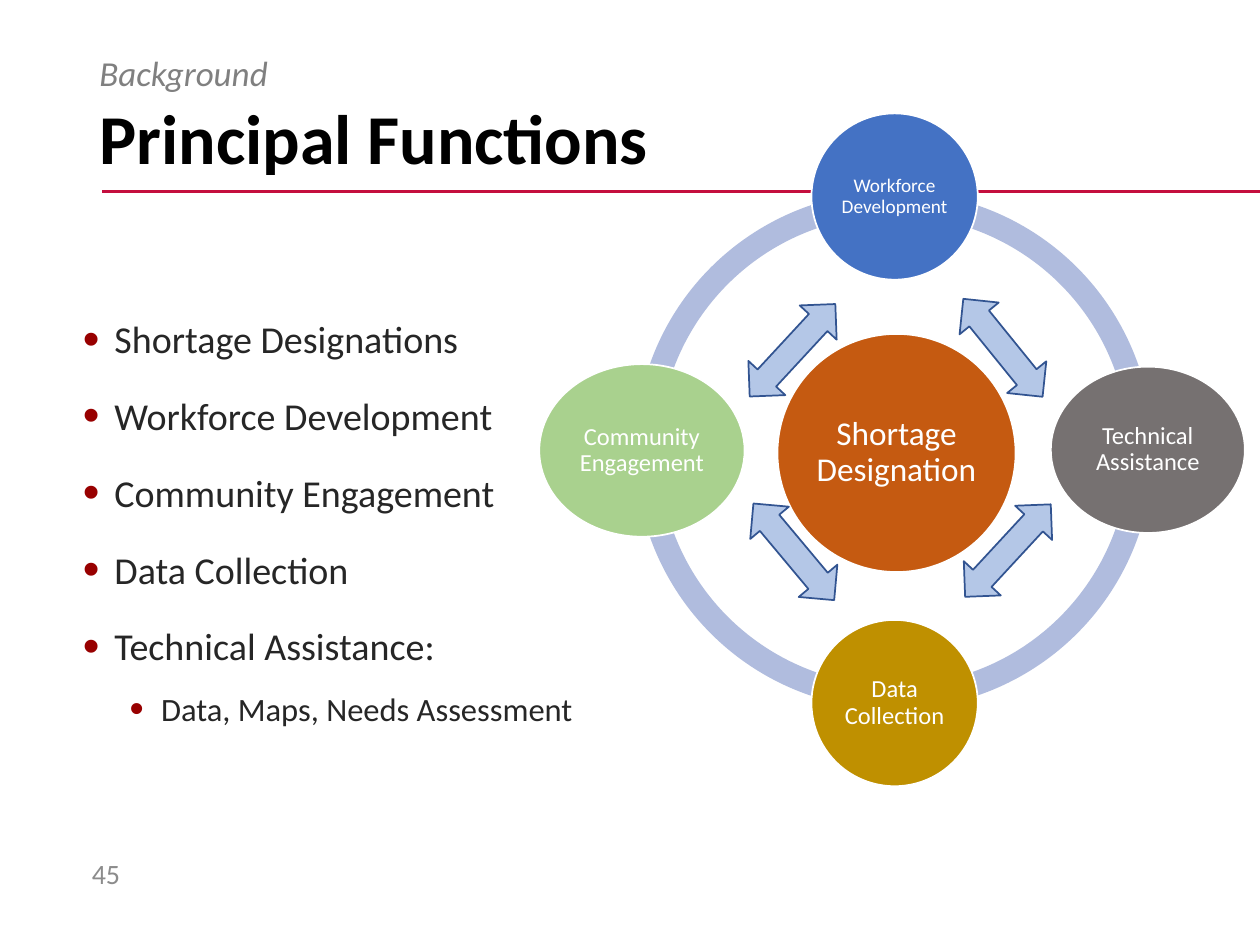
from lxml.etree import SubElement
from pptx import Presentation
from pptx.dml.color import RGBColor
from pptx.enum.shapes import MSO_CONNECTOR, MSO_SHAPE
from pptx.enum.text import MSO_ANCHOR, MSO_AUTO_SIZE, PP_ALIGN
from pptx.oxml.ns import qn
from pptx.util import Inches, Pt

BLACK = RGBColor(0x00, 0x00, 0x00)
WHITE = RGBColor(0xFF, 0xFF, 0xFF)
GRAY = RGBColor(0x80, 0x80, 0x80)
NUMBER_GRAY = RGBColor(0x8C, 0x8C, 0x8C)
DARK = RGBColor(0x26, 0x26, 0x26)
CRIMSON = RGBColor(0xC4, 0x0E, 0x3E)
RING_BLUE = RGBColor(0xB0, 0xBC, 0xDE)
ORANGE = RGBColor(0xC5, 0x5A, 0x11)
BLUE = RGBColor(0x44, 0x72, 0xC4)
TAUPE = RGBColor(0x76, 0x71, 0x71)
GOLD = RGBColor(0xBF, 0x90, 0x00)
GREEN = RGBColor(0xA9, 0xD1, 0x8E)
ARROW_FILL = RGBColor(0xB4, 0xC7, 0xE7)
ARROW_LINE = RGBColor(0x32, 0x54, 0x91)
BULLET_RED = "980000"

presentation = Presentation()
presentation.slide_width = Inches(10)
presentation.slide_height = Inches(7.5)
slide = presentation.slides.add_slide(presentation.slide_layouts[5])

# Grid of 100 columns by 75 rows
COLUMN = presentation.slide_width / 100
ROW = presentation.slide_height / 75


def box(left, top, width, height):
    """Turn grid columns and rows into a position and a size."""
    return (round(left * COLUMN), round(top * ROW),
            round(width * COLUMN), round(height * ROW))


def write_text(frame, text, size, color, bold=False, italic=False,
               align=PP_ALIGN.LEFT, anchor=MSO_ANCHOR.TOP, spacing=0.9,
               before=0, bullet_indent=None, level=0):
    """Fill the frame's empty first paragraph, or append a new one."""
    frame.word_wrap = True
    frame.auto_size = MSO_AUTO_SIZE.NONE
    frame.vertical_anchor = anchor
    paragraph = frame.add_paragraph() if frame.text else frame.paragraphs[0]
    paragraph.alignment = align
    paragraph.level = level
    paragraph.line_spacing = spacing
    paragraph.space_before = Pt(before)
    if bullet_indent is not None:
        properties = paragraph._p.get_or_add_pPr()
        properties.set("marL", str(Inches(bullet_indent)))
        properties.set("indent", str(Inches(-0.25)))
        bullet_color = SubElement(properties, qn("a:buClr"))
        SubElement(bullet_color, qn("a:srgbClr"), val=BULLET_RED)
        SubElement(properties, qn("a:buSzPct"), val="125000")
        SubElement(properties, qn("a:buFont"), typeface="Arial")
        SubElement(properties, qn("a:buChar"), char="•")
    run = paragraph.add_run()
    run.text = text
    run.font.name = "Calibri"
    run.font.size = Pt(size)
    run.font.color.rgb = color
    run.font.bold = bold
    run.font.italic = italic


# Title, kicker and rule
title = slide.shapes.title
title.left, title.top, title.width, title.height = box(6.9, 4, 86.2, 14.5)
write_text(title.text_frame, "Principal Functions", 40, BLACK, bold=True,
           anchor=MSO_ANCHOR.MIDDLE)

rule_left, rule_top, rule_width, _ = box(8.1, 15.2, 91.9, 0)
rule = slide.shapes.add_connector(MSO_CONNECTOR.STRAIGHT, rule_left, rule_top,
                                  rule_left + rule_width, rule_top)
rule.line.color.rgb = CRIMSON
rule.line.width = Pt(2.25)
SubElement(rule._element.spPr, qn("a:effectLst"))

kicker = slide.shapes.add_textbox(*box(6.9, 4, 86.2, 4.9))
write_text(kicker.text_frame, "Background", 20, GRAY, italic=True)

# Ring of four quarter arcs; angles are in units of 100000/60000 degree
QUARTER = 54
for quarter in range(4):
    arc = slide.shapes.add_shape(MSO_SHAPE.BLOCK_ARC,
                                 *box(50.4, 15.2, 41.1, 41.1))
    arc.adjustments[0] = quarter * QUARTER
    arc.adjustments[1] = (quarter + 1) % 4 * QUARTER
    arc.adjustments[2] = 0.046
    arc.shadow.inherit = False
    arc.fill.solid()
    arc.fill.fore_color.rgb = RING_BLUE
    arc.line.fill.background()

# Function circles: text, size, fill, left, top, width, height
circles = [
    ("Shortage Designation", 19, ORANGE, 61.7, 26.5, 18.9, 18.9),
    ("Workforce Development", 11, BLUE, 64.4, 9, 13.2, 13.2),
    ("Technical Assistance", 14, TAUPE, 83.4, 29.1, 15.4, 13.2),
    ("Data Collection", 14, GOLD, 64.4, 49.2, 13.2, 13.2),
    ("Community Engagement", 14, GREEN, 42.8, 28.9, 16.3, 13.7),
]
for text, size, fill, *place in circles:
    circle = slide.shapes.add_shape(MSO_SHAPE.OVAL, *box(*place))
    circle.shadow.inherit = False
    circle.fill.solid()
    circle.fill.fore_color.rgb = fill
    circle.line.color.rgb = WHITE
    circle.line.width = Pt(1)
    frame = circle.text_frame
    frame.margin_left = frame.margin_right = Inches(0.02)
    frame.margin_top = frame.margin_bottom = Inches(0.02)
    write_text(frame, text, size, WHITE, align=PP_ALIGN.CENTER,
               anchor=MSO_ANCHOR.MIDDLE)

# Double arrows around the centre: left, top, rotation
arrows = [(57.9, 25.8, 312.8), (75, 41.7, 312.8),
          (58, 41.8, 50.1), (74.6, 25.6, 231)]
for left, top, rotation in arrows:
    arrow = slide.shapes.add_shape(MSO_SHAPE.LEFT_RIGHT_ARROW,
                                   *box(left, top, 10, 4))
    arrow.rotation = rotation
    arrow.shadow.inherit = False
    arrow.fill.solid()
    arrow.fill.fore_color.rgb = ARROW_FILL
    arrow.line.color.rgb = ARROW_LINE
    arrow.line.width = Pt(1)

# Bullet list
bullets = slide.shapes.add_textbox(*box(5.3, 23.5, 82.6, 35.7)).text_frame
functions = ["Shortage Designations", "Workforce Development",
             "Community Engagement", "Data Collection",
             "Technical Assistance:"]
for index, text in enumerate(functions):
    write_text(bullets, text, 21.7, DARK, spacing=1.3,
               before=10 if index else 0, bullet_indent=0.28)
write_text(bullets, "Data, Maps, Needs Assessment", 18.6, DARK, spacing=1.3,
           before=5, bullet_indent=0.65, level=1)

# Slide number
number = slide.shapes.add_textbox(*box(6.3, 67.3, 5.5, 4))
write_text(number.text_frame, "45", 16, NUMBER_GRAY, spacing=1.0,
           anchor=MSO_ANCHOR.MIDDLE)

presentation.save("out.pptx")
